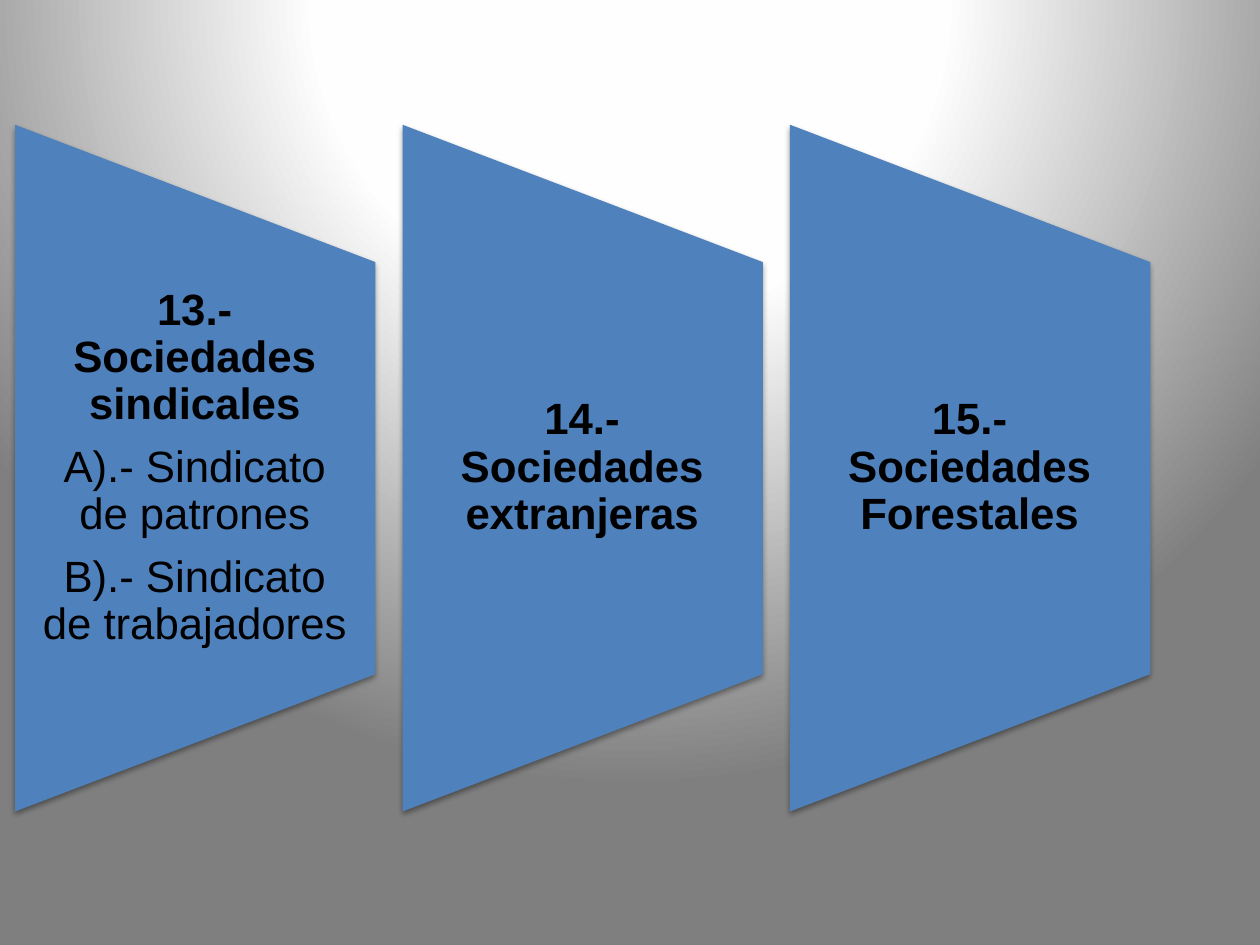
from dataclasses import dataclass

from pptx import Presentation
from pptx.dml.color import RGBColor
from pptx.enum.shapes import MSO_SHAPE
from pptx.enum.text import MSO_ANCHOR, PP_ALIGN
from pptx.oxml import parse_xml
from pptx.oxml.ns import nsdecls, qn
from pptx.util import Inches, Pt


@dataclass(frozen=True)
class Theme:
    panel: RGBColor = RGBColor(0x4F, 0x81, 0xBD)
    text: RGBColor = RGBColor(0, 0, 0)
    backdrop: tuple = ((0, "FFFFFF"), (40, "FEFEFE"), (100, "7F7F7F"))
    font: str = "Arial"
    size: Pt = Pt(25)
    gap: Pt = Pt(8.75)


THEME = Theme()
PANELS = [
    ("13.- Sociedades sindicales", "A).- Sindicato de patrones", "B).- Sindicato de trabajadores"),
    ("14.- Sociedades extranjeras",),
    ("15.- Sociedades Forestales",),
]


def paint_background(s):
    s.background.fill.gradient()
    grad = s.element.find(".//" + qn("a:gradFill"))
    stops = "".join(
        f'<a:gs pos="{pos * 1000}"><a:srgbClr val="{color}"/></a:gs>'
        for pos, color in THEME.backdrop
    )
    grad.getparent().replace(grad, parse_xml(
        f'<a:gradFill {nsdecls("a")} rotWithShape="1"><a:gsLst>{stops}</a:gsLst>'
        '<a:path path="circle"><a:fillToRect l="50000" t="-80000" r="50000" b="180000"/>'
        '</a:path></a:gradFill>'
    ))


def add_shadow(sp):
    sp.shadow.inherit = False
    effects = sp.element.spPr.find(qn("a:effectLst"))
    effects.append(parse_xml(
        f'<a:outerShdw {nsdecls("a")} blurRad="{Pt(3.1)}" dist="{Pt(1.6)}" dir="5400000" '
        'rotWithShape="0"><a:srgbClr val="000000"><a:alpha val="38000"/></a:srgbClr>'
        '</a:outerShdw>'
    ))


def add_panel(s, lines, left, top, width, height):
    inset = (height - width) // 2
    sp = s.shapes.add_shape(
        MSO_SHAPE.FLOWCHART_MANUAL_OPERATION, left - inset, top + inset, height, width
    )
    sp.rotation = 270
    sp.fill.solid()
    sp.fill.fore_color.rgb = THEME.panel
    sp.line.fill.background()
    add_shadow(sp)

    box = s.shapes.add_textbox(left, top + height // 5, width, height * 3 // 5)
    tf = box.text_frame
    tf.word_wrap = True
    tf.vertical_anchor = MSO_ANCHOR.MIDDLE
    tf.margin_left, tf.margin_right = Inches(0.17), Inches(0.18)
    tf.margin_top = tf.margin_bottom = 0
    tf.text = "\n".join(lines)
    for i, p in enumerate(tf.paragraphs):
        p.alignment = PP_ALIGN.CENTER
        p.line_spacing = 0.9
        p.space_after = THEME.gap
        p.font.name = THEME.font
        p.font.size = THEME.size
        p.font.color.rgb = THEME.text
        p.font.bold = i == 0


def add_panel_row(s, panels, left, top, width, height, gap):
    for i, lines in enumerate(panels):
        add_panel(s, lines, left + i * (width + gap), top, width, height)


def main():
    prs = Presentation()
    prs.slide_width, prs.slide_height = Inches(10), Inches(7.5)
    s = prs.slides.add_slide(prs.slide_layouts[6])
    paint_background(s)
    add_panel_row(
        s, PANELS, Inches(0.12), Inches(0.99), Inches(2.86), Inches(5.45), Inches(0.215)
    )
    prs.save("out.pptx")


if __name__ == "__main__":
    main()
